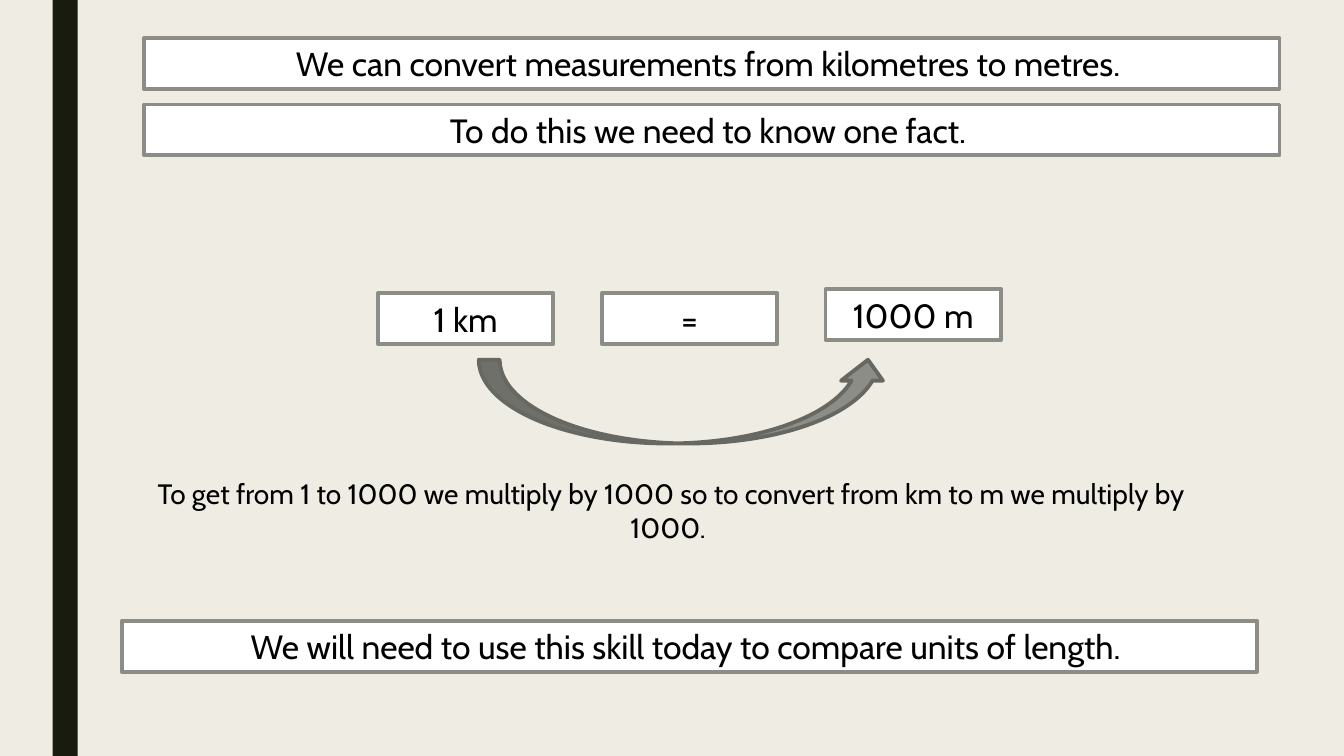
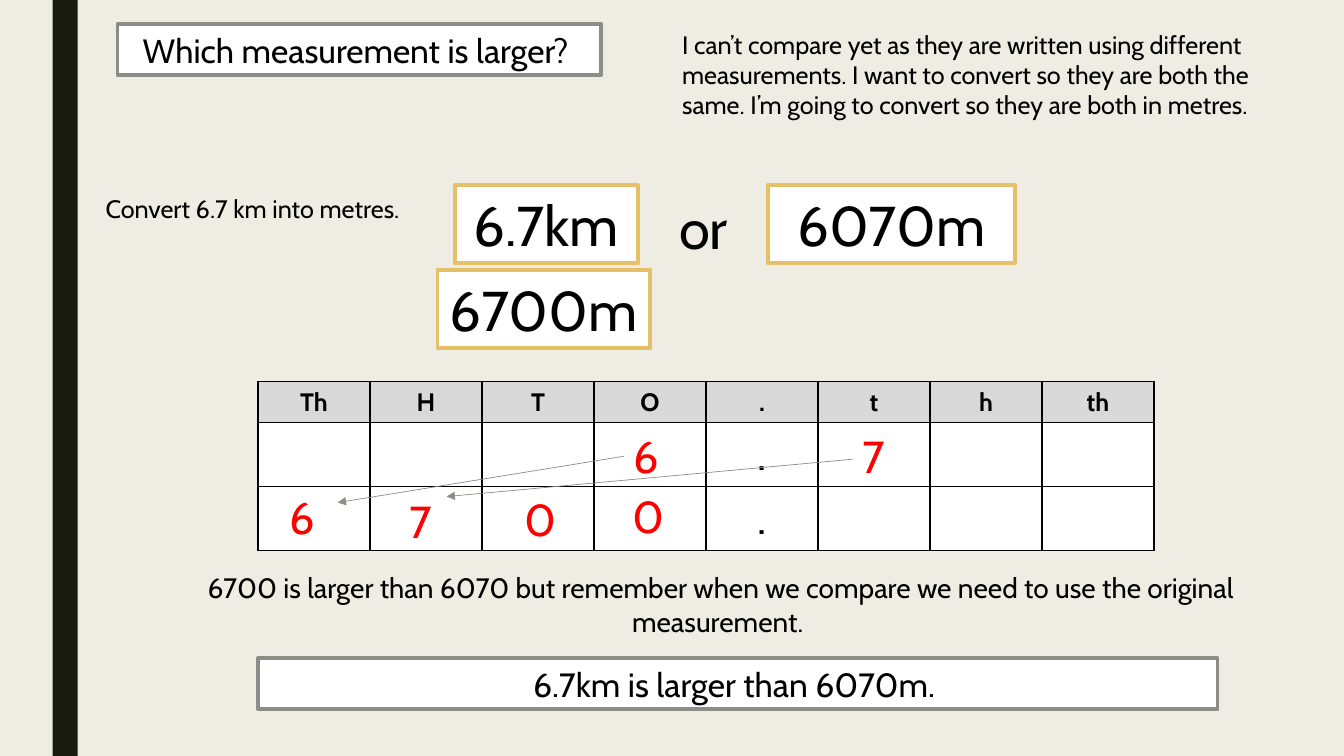
from lxml.etree import SubElement
from pptx import Presentation
from pptx.dml.color import RGBColor
from pptx.enum.shapes import MSO_CONNECTOR, MSO_SHAPE
from pptx.enum.text import MSO_ANCHOR, PP_ALIGN
from pptx.oxml.ns import qn
from pptx.util import Pt

FONT = "Cabin"
CREAM = RGBColor(0xEF, 0xED, 0xE3)
DARK = RGBColor(0x19, 0x1B, 0x0E)
GREY = RGBColor(0x8C, 0x8D, 0x86)
DARK_GREY = RGBColor(0x68, 0x68, 0x63)
HEADER_GREY = RGBColor(0xD9, 0xD9, 0xD9)
GOLD = RGBColor(0xE6, 0xC0, 0x69)
RED = RGBColor(0xFF, 0x00, 0x00)
BLACK = RGBColor(0x00, 0x00, 0x00)
WHITE = RGBColor(0xFF, 0xFF, 0xFF)

PAGE_WIDTH, PAGE_HEIGHT = 960, 540
BANNER_HEIGHT = 36.35
CHOICE_HEIGHT = 55.75
CELL_WIDTH, HEADER_HEIGHT, ROW_HEIGHT = 80, 29.2, 45.7


def points(*values):
    return [Pt(value) for value in values]


def write(frame, text, size=24, color=BLACK, bold=False,
          align=PP_ALIGN.CENTER):
    para = frame.paragraphs[0]
    para.alignment = align
    span = para.add_run()
    span.text = text
    span.font.name = FONT
    span.font.size = Pt(size)
    span.font.bold = bold
    span.font.color.rgb = color


def add_figure(page, box, kind=MSO_SHAPE.RECTANGLE, fill=WHITE, line=None):
    figure = page.shapes.add_shape(kind, *points(*box))
    figure.shadow.inherit = False
    figure.fill.solid()
    figure.fill.fore_color.rgb = fill
    if line is None:
        figure.line.fill.background()
    else:
        figure.line.color.rgb = line
        figure.line.width = Pt(2.75)
    return figure


def add_panel(page, box, text, size=24, line=GREY):
    frame = add_figure(page, box, line=line).text_frame
    frame.word_wrap = True
    frame.vertical_anchor = MSO_ANCHOR.MIDDLE
    write(frame, text, size=size)


def add_label(page, box, text, **style):
    frame = page.shapes.add_textbox(*points(*box)).text_frame
    frame.word_wrap = True
    write(frame, text, **style)


def add_arrow(page, start, end):
    arrow = page.shapes.add_connector(
        MSO_CONNECTOR.STRAIGHT, *points(*start, *end))
    arrow.line.color.rgb = GREY
    arrow.line.width = Pt(0.5)
    SubElement(arrow.line._get_or_add_ln(), qn("a:tailEnd"), type="triangle")
    SubElement(arrow._element.spPr, qn("a:effectLst"))


def add_page(deck):
    page = deck.slides.add_slide(deck.slide_layouts[6])
    page.background.fill.solid()
    page.background.fill.fore_color.rgb = CREAM
    add_figure(page, (37.5, 0, 18, PAGE_HEIGHT), fill=DARK)
    return page


def add_banners(page, box, texts):
    left, top, width, height = box
    step = (height - BANNER_HEIGHT) / (len(texts) - 1)
    for index, text in enumerate(texts):
        add_panel(page, (left, top + index * step, width, BANNER_HEIGHT), text)


def add_fact(page, box):
    left, top, width, height = box
    panel_width = 125.3
    step = (width - panel_width) / 2
    for index, (text, rise) in enumerate([("1 km", 0), ("=", 0), ("1000 m", 2.9)]):
        add_panel(page, (left + index * step, top - rise, panel_width,
                         BANNER_HEIGHT), text)
    arrow_top = 47.5
    add_figure(page, (left + 72, top + arrow_top, 293, height - arrow_top),
               kind=MSO_SHAPE.CURVED_UP_ARROW, fill=GREY, line=DARK_GREY)


def add_choices(page, box):
    left, top, width, height = box
    choices = [
        ("6.7km", 12.2, 0, 131),
        ("6070m", width - 176.4, 0, 176.4),
        ("6700m", 0, height - CHOICE_HEIGHT, 152),
    ]
    for text, shift, drop, panel_width in choices:
        add_panel(page, (left + shift, top + drop, panel_width, CHOICE_HEIGHT),
                  text, size=40, line=GOLD)
    add_label(page, (left + 161.3, top + 2.1, 57.6, CHOICE_HEIGHT), "or", size=40)


def format_cell(cell, fill):
    properties = cell._tc.get_or_add_tcPr()
    for side in ("lnL", "lnR", "lnT", "lnB"):
        border = SubElement(properties, qn(f"a:{side}"), w=str(Pt(1)))
        paint = SubElement(border, qn("a:solidFill"))
        SubElement(paint, qn("a:srgbClr"), val=str(BLACK))
    cell.fill.solid()
    cell.fill.fore_color.rgb = fill


def add_place_value_table(page, box):
    headings = ["Th", "H", "T", "O", ".", "t", "h", "th"]
    table = page.shapes.add_table(3, len(headings), *points(*box)).table
    table.first_row = table.horz_banding = False
    for column in table.columns:
        column.width = Pt(CELL_WIDTH)
    for row, height in zip(table.rows, (HEADER_HEIGHT, ROW_HEIGHT, ROW_HEIGHT)):
        row.height = Pt(height)
    for index, heading in enumerate(headings):
        for number in range(3):
            cell = table.cell(number, index)
            format_cell(cell, WHITE if number else HEADER_GREY)
            if number == 0:
                cell.vertical_anchor = MSO_ANCHOR.MIDDLE
                write(cell.text_frame, heading, size=18, bold=True)
            elif heading == ".":
                write(cell.text_frame, heading, size=32)


def add_place_value(page, box):
    left, top, _, _ = box
    add_place_value_table(page, box)
    digits = [
        ("6", 261.4, 30.2), ("7", 424.8, 30.2),
        ("6", 15.1, 73.4), ("7", 100.8, 76.3),
        ("0", 183.6, 74.9), ("0", 260.7, 72.7),
    ]
    for digit, across, down in digits:
        add_label(page, (left + across, top + down, 33.8, 46), digit,
                  size=32, color=RED, align=PP_ALIGN.LEFT)
    moves = [((261.4, 53.3), (56.9, 86.4)), ((424.8, 55.4), (134.7, 82.1))]
    for move in moves:
        add_arrow(page, *[(left + across, top + down) for across, down in move])


def build_conversion_page(deck):
    page = add_page(deck)
    add_banners(page, (103, 27.2, 811, 83.85), [
        "We can convert measurements from kilometres to metres. ",
        "To do this we need to know one fact. ",
    ])
    add_fact(page, (270, 209.5, 445, 107.3))
    add_label(page, (103, 337, 753, 55.7),
              "To get from 1 to 1000 we multiply by 1000 so to convert "
              "from km to m we multiply by 1000. ", size=20)
    add_panel(page, (87, 443.5, 811, BANNER_HEIGHT),
              "We will need to use this skill today to compare units of length. ")


def build_comparison_page(deck):
    page = add_page(deck)
    add_panel(page, (84, 17.3, 345.6, BANNER_HEIGHT),
              "Which measurement is larger? ")
    add_label(page, (480.2, 17.3, 463.7, 72.7),
              "I can’t compare yet as they are written using different "
              "measurements. I want to convert so they are both the same. "
              "I’m going to convert so they are both in metres.",
              size=18, align=PP_ALIGN.LEFT)
    add_label(page, (68.4, 134.6, 232.6, 29), "Convert 6.7 km into metres.",
              size=18, align=PP_ALIGN.LEFT)
    add_choices(page, (312.5, 132.3, 412.5, 116.4))
    add_place_value(page, (184.3, 272.6, 8 * CELL_WIDTH,
                           HEADER_HEIGHT + 2 * ROW_HEIGHT))
    add_label(page, (86.4, 404, 857, 55.7),
              "6700 is larger than 6070 but remember when we compare we need "
              "to use the original measurement. ", size=20)
    add_panel(page, (184.3, 470.2, 685.4, BANNER_HEIGHT),
              "6.7km is larger than 6070m. ")


def main():
    deck = Presentation()
    deck.slide_width, deck.slide_height = points(PAGE_WIDTH, PAGE_HEIGHT)
    build_conversion_page(deck)
    build_comparison_page(deck)
    deck.save("out.pptx")


if __name__ == "__main__":
    main()
